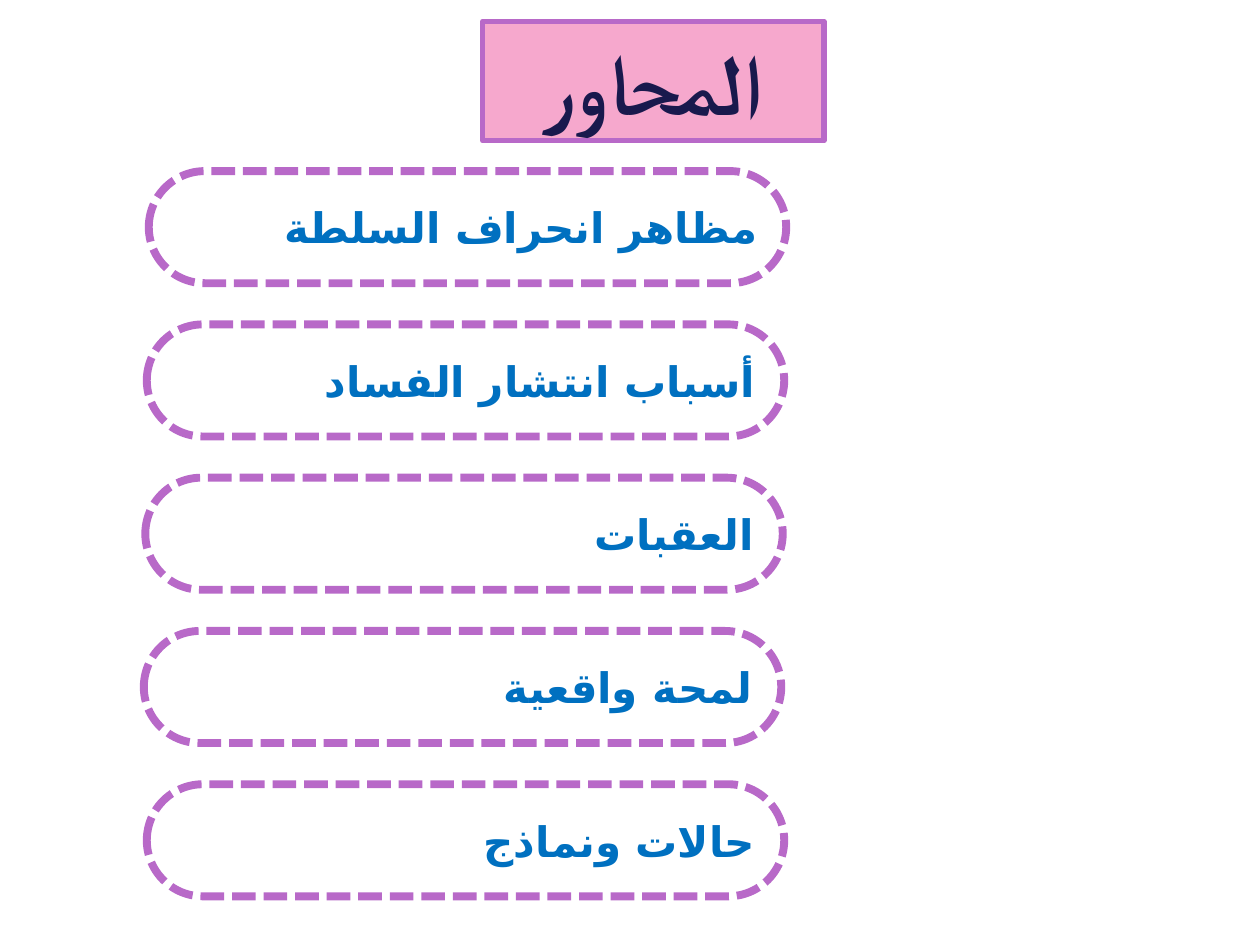
from dataclasses import dataclass

from pptx import Presentation
from pptx.dml.color import RGBColor
from pptx.enum.dml import MSO_LINE_DASH_STYLE as Dash
from pptx.enum.shapes import MSO_SHAPE as Shape
from pptx.enum.text import MSO_ANCHOR as Anchor, MSO_AUTO_SIZE as AutoSize, PP_ALIGN as Align
from pptx.oxml.ns import qn
from pptx.util import Cm, Inches, Pt


@dataclass(frozen=True)
class Theme:
    """Colours, fonts and sizes of the slide."""
    pink: str = "F6A8CD"
    purple: str = "B869C8"
    white: str = "FFFFFF"
    navy: str = "19194D"
    blue: str = "0070C0"
    title_font: str = "Arial"
    topic_font: str = "DejaVu Sans"
    title_size: float = 49
    topic_size: float = 24


THEME = Theme()
TITLE = "المحاور"
TOPICS = [
    ("مظاهر انحراف السلطة", 3.0),
    ("أسباب انتشار الفساد", 2.96),
    ("العقبات", 2.93),
    ("لمحة واقعية", 2.9),
    ("حالات ونماذج", 2.96),
]
FIRST_TOP, STEP = 3.45, 3.09
PILL_WIDTH, PILL_HEIGHT = 12.85, 2.26


def write(box, text, *, font, size, color, align, rtl=False, wrap=True):
    """Put one bold formatted line of text in a box."""
    frame = box.text_frame
    frame.auto_size = AutoSize.NONE
    frame.word_wrap = wrap
    frame.vertical_anchor = Anchor.MIDDLE
    frame.margin_left = frame.margin_right = Inches(0.1)
    frame.margin_top = frame.margin_bottom = Inches(0.05)
    para = frame.paragraphs[0]
    para.alignment = align
    if rtl:
        para._p.get_or_add_pPr().set("rtl", "1")
    span = para.add_run()
    span.text = text
    span.font.name = font
    span.font.size = Pt(size)
    span.font.bold = True
    span.font.color.rgb = RGBColor.from_string(color)
    script_font = span._r.get_or_add_rPr().makeelement(qn("a:cs"), {"typeface": font})
    span.font._element.find(qn("a:latin")).addnext(script_font)


def paint(box, fill, width, dash=None):
    """Fill a box and outline it in purple."""
    box.fill.solid()
    box.fill.fore_color.rgb = RGBColor.from_string(fill)
    box.line.color.rgb = RGBColor.from_string(THEME.purple)
    box.line.width = Pt(width)
    if dash is not None:
        box.line.dash_style = dash


def add_title(page):
    """Place the heading in the title placeholder."""
    box = page.shapes.title
    box.left, box.top, box.width, box.height = Cm(9.73), Cm(0.43), Cm(6.88), Cm(2.41)
    paint(box, THEME.pink, 3)
    write(box, TITLE, font=THEME.title_font, size=THEME.title_size,
          color=THEME.navy, align=Align.CENTER)


def add_topic(page, text, left, top):
    """Draw one dashed pill with its topic."""
    box = page.shapes.add_shape(Shape.ROUNDED_RECTANGLE, Cm(left), Cm(top),
                                Cm(PILL_WIDTH), Cm(PILL_HEIGHT))
    box.adjustments[0] = 0.5
    box.shadow.inherit = False
    paint(box, THEME.white, 4.5, Dash.SQUARE_DOT)
    write(box, text, font=THEME.topic_font, size=THEME.topic_size,
          color=THEME.blue, align=Align.RIGHT, rtl=True, wrap=False)


def main():
    """Build the slide and save it."""
    deck = Presentation()
    deck.slide_width, deck.slide_height = Inches(10), Inches(7.5)
    page = deck.slides.add_slide(deck.slide_layouts[5])
    add_title(page)
    for row, (text, left) in enumerate(TOPICS):
        add_topic(page, text, left, FIRST_TOP + row * STEP)
    deck.save("out.pptx")


if __name__ == "__main__":
    main()
